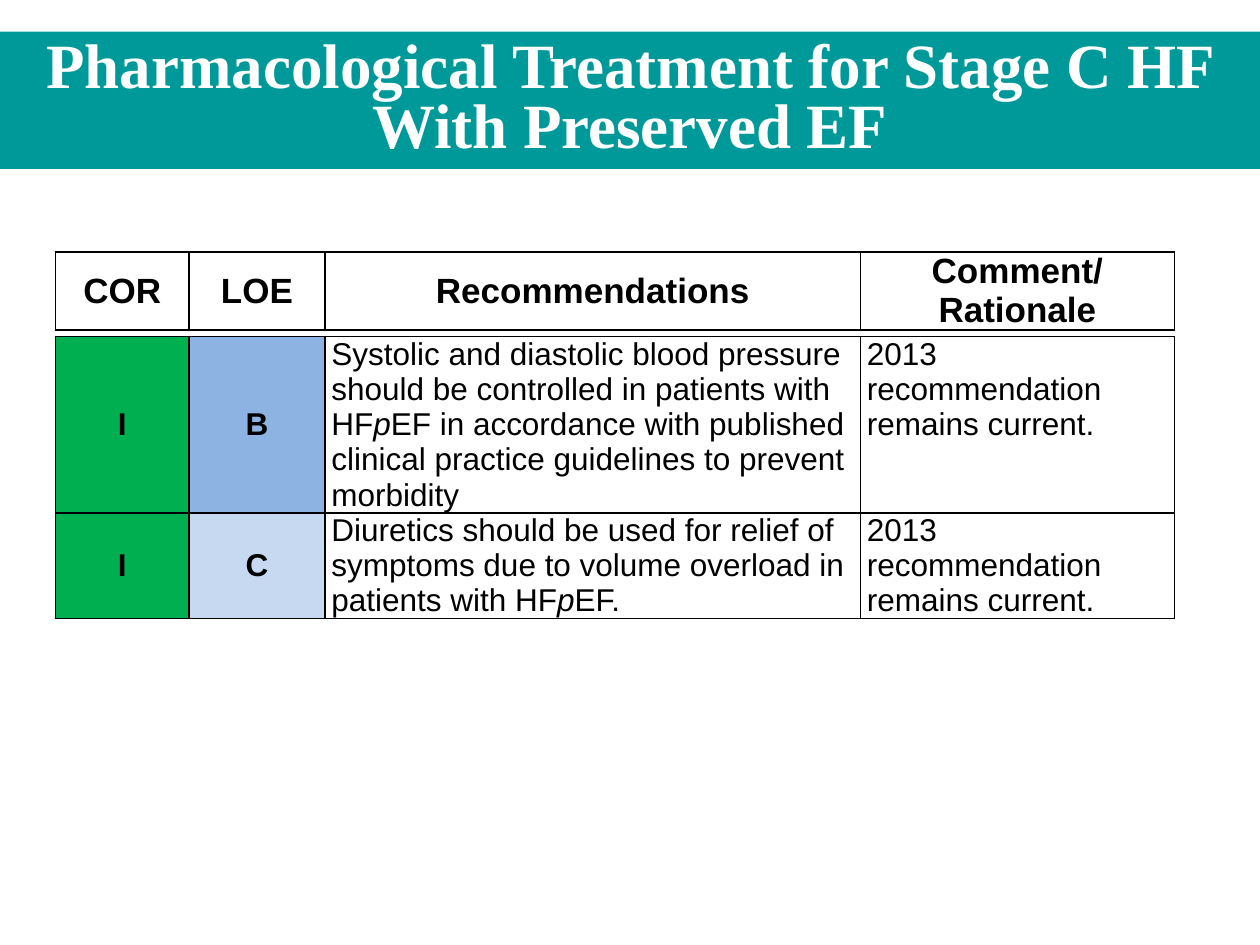
from lxml.etree import SubElement
from pptx import Presentation
from pptx.dml.color import RGBColor
from pptx.enum.text import MSO_ANCHOR as Anchor, PP_ALIGN as Align
from pptx.oxml.ns import qn
from pptx.util import Inches, Pt

TITLE = "Pharmacological Treatment for Stage C HF With Preserved EF"
HEADER = ["COR", "LOE", "Recommendations", "Comment/\nRationale"]
CURRENT = "2013 recommendation remains current."
ROWS = [
    ["I", "B", ("Systolic and diastolic blood pressure should be controlled in patients with HF", "p",
                "EF in accordance with published clinical practice guidelines to prevent morbidity"), CURRENT],
    ["I", "C", ("Diuretics should be used for relief of symptoms due to volume overload in patients with HF",
                "p", "EF."), CURRENT],
]
FILLS = {"I": "00B050", "B": "8DB3E2", "C": "C6D9F1"}
COLS = [1.06, 1.08, 4.25, 2.49]
LEFT = 0.44


def rgb(hex_str):
    return RGBColor.from_string(hex_str)


def style(p, name, size, color, bold, align):
    p.alignment = align
    f = p.font
    f.name, f.size, f.bold = name, Pt(size), bold
    f.color.rgb = rgb(color)


def add_borders(cell):
    tc_pr = cell._tc.get_or_add_tcPr()
    for side in ("lnL", "lnR", "lnT", "lnB"):
        ln = SubElement(tc_pr, qn(f"a:{side}"), w=str(Pt(1)))
        SubElement(SubElement(ln, qn("a:solidFill")), qn("a:srgbClr"), val="000000")


def fill_cell(cell, content, size, margin, strong):
    add_borders(cell)
    if content in FILLS:
        cell.fill.solid()
        cell.fill.fore_color.rgb = rgb(FILLS[content])
    else:
        cell.fill.background()
    cell.margin_left = cell.margin_right = Inches(margin)
    cell.margin_top = cell.margin_bottom = 0
    cell.vertical_anchor = Anchor.MIDDLE if strong else Anchor.TOP
    tf = cell.text_frame
    if isinstance(content, tuple):
        for i, part in enumerate(content):
            r = tf.paragraphs[0].add_run()
            r.text = part
            r.font.italic = i == 1
    else:
        tf.text = content
    for p in tf.paragraphs:
        style(p, "Arial", size, "000000", strong, Align.CENTER if strong else Align.LEFT)


def add_grid(s, top, heights, rows, size, margin, strong_cols):
    """Add a bordered table whose first strong_cols columns are bold and centred."""
    table = s.shapes.add_table(len(rows), len(COLS), Inches(LEFT), Inches(top),
                               Inches(sum(COLS)), Inches(sum(heights))).table
    table.first_row = table.horz_banding = False
    for col, width in zip(table.columns, COLS):
        col.width = Inches(width)
    for row, height, values in zip(table.rows, heights, rows):
        row.height = Inches(height)
        for i, (cell, value) in enumerate(zip(row.cells, values)):
            fill_cell(cell, value, size, margin, i < strong_cols)


def main():
    prs = Presentation()
    prs.slide_width, prs.slide_height = Inches(10), Inches(7.5)
    s = prs.slides.add_slide(prs.slide_layouts[5])

    title = s.shapes.title
    title.left, title.top, title.width, title.height = 0, Inches(0.25), Inches(10), Inches(1.09)
    title.fill.solid()
    title.fill.fore_color.rgb = rgb("009999")
    tf = title.text_frame
    tf.text = TITLE
    tf.vertical_anchor = Anchor.MIDDLE
    p = tf.paragraphs[0]
    p.line_spacing = 0.8
    style(p, "Times New Roman", 36, "FFFFFF", True, Align.CENTER)

    add_grid(s, 2.67, [1.4, 0.84], ROWS, 18, 0.05, 2)
    add_grid(s, 2, [0.62], [HEADER], 20, 0.07, 4)
    prs.save("out.pptx")


if __name__ == "__main__":
    main()
